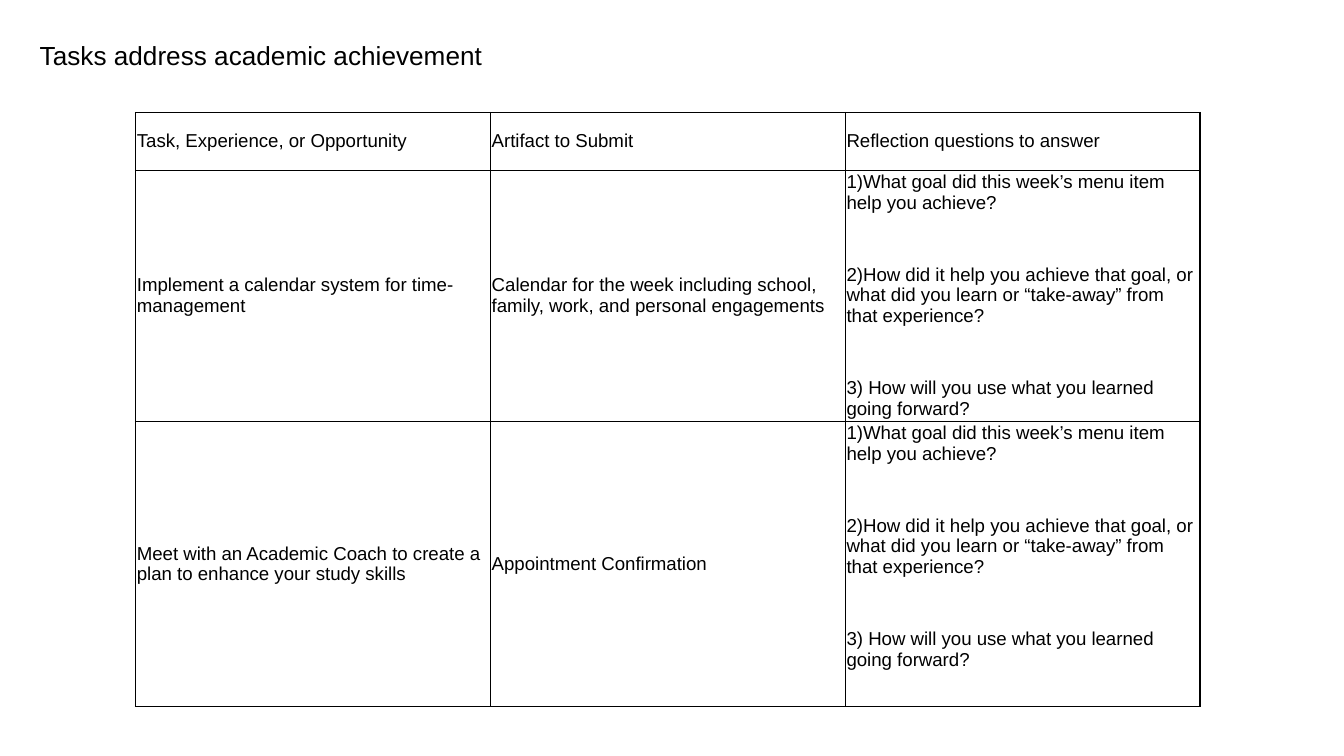
from lxml.etree import SubElement
from pptx import Presentation
from pptx.dml.color import RGBColor
from pptx.enum.text import MSO_ANCHOR as Anchor, MSO_AUTO_SIZE as AutoSize
from pptx.oxml.ns import qn
from pptx.util import Pt

BLACK = "000000"
WHITE = "FFFFFF"
FONT = "Arial"
COLUMN_WIDTH = 190.1
ROW_HEIGHTS = [31, 134.5, 153]
QUESTION_GAP = 27.3

QUESTIONS = [
    "1)What goal did this week’s menu item help you achieve?",
    "2)How did it help you achieve that goal, or what did you learn or “take-away” from that experience?",
    "3) How will you use what you learned going forward?",
]
ROWS = [
    [["Task, Experience, or Opportunity"], ["Artifact to Submit"], ["Reflection questions to answer"]],
    [["Implement a calendar system for time-management"],
     ["Calendar for the week including school, family, work, and personal engagements"],
     QUESTIONS],
    [["Meet with an Academic Coach to create a plan to enhance your study skills"],
     ["Appointment Confirmation"],
     QUESTIONS],
]


def color(hex_code):
    return RGBColor.from_string(hex_code)


def write(frame, paragraphs, size, gap=0):
    frame.text = "\n".join(paragraphs)
    for index, paragraph in enumerate(frame.paragraphs):
        if index:
            paragraph.space_before = Pt(gap)
        for run in paragraph.runs:
            run.font.name = FONT
            run.font.size = Pt(size)
            run.font.color.rgb = color(BLACK)


def add_borders(cell, width, hex_code):
    properties = cell._tc.get_or_add_tcPr()
    for side in ("a:lnL", "a:lnR", "a:lnT", "a:lnB"):
        line = SubElement(properties, qn(side), w=str(Pt(width)))
        fill = SubElement(line, qn("a:solidFill"))
        SubElement(fill, qn("a:srgbClr"), val=hex_code)


def fill_cell(cell, paragraphs):
    cell.margin_left = cell.margin_right = Pt(0.75)
    cell.margin_top = cell.margin_bottom = Pt(0.75)
    # Question lists start at the top; single entries are centred.
    cell.vertical_anchor = Anchor.TOP if len(paragraphs) > 1 else Anchor.MIDDLE
    write(cell.text_frame, paragraphs, 10, QUESTION_GAP)
    add_borders(cell, 0.75, BLACK)
    cell.fill.solid()
    cell.fill.fore_color.rgb = color(WHITE)


def add_task_table(slide):
    column_count = len(ROWS[0])
    table = slide.shapes.add_table(
        len(ROWS), column_count, Pt(72.6), Pt(60.2),
        Pt(COLUMN_WIDTH * column_count), Pt(sum(ROW_HEIGHTS))).table
    table.first_row = False
    table.horz_banding = False
    for column in table.columns:
        column.width = Pt(COLUMN_WIDTH)
    for row, height, entries in zip(table.rows, ROW_HEIGHTS, ROWS):
        row.height = Pt(height)
        for cell, paragraphs in zip(row.cells, entries):
            fill_cell(cell, paragraphs)


def add_heading(slide, heading):
    frame = slide.shapes.add_textbox(Pt(14.2), Pt(13.8), Pt(544.3), Pt(31.5)).text_frame
    frame.word_wrap = True
    frame.auto_size = AutoSize.SHAPE_TO_FIT_TEXT
    frame.margin_left = frame.margin_right = Pt(7.2)
    frame.margin_top = frame.margin_bottom = Pt(7.2)
    write(frame, [heading], 14)


def main():
    presentation = Presentation()
    presentation.slide_width = Pt(720)
    presentation.slide_height = Pt(405)
    slide = presentation.slides.add_slide(presentation.slide_layouts[6])
    add_task_table(slide)
    add_heading(slide, "Tasks address academic achievement")
    presentation.save("out.pptx")


if __name__ == "__main__":
    main()
